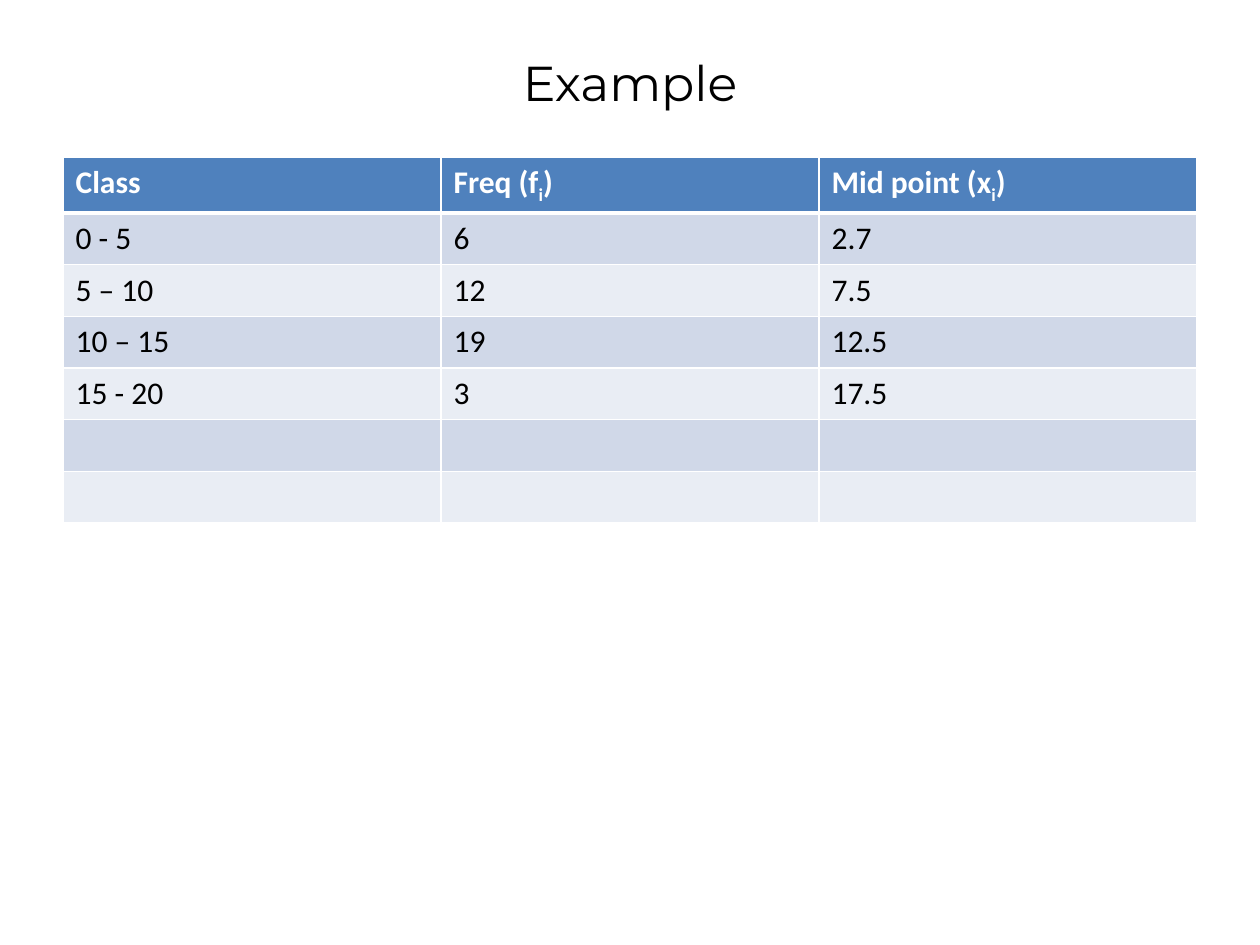
from lxml import etree
from pptx import Presentation
from pptx.dml.color import RGBColor
from pptx.enum.text import MSO_ANCHOR, PP_ALIGN
from pptx.oxml.ns import qn
from pptx.util import Inches, Pt

LEFT, CENTER = PP_ALIGN.LEFT, PP_ALIGN.CENTER
MIDDLE = MSO_ANCHOR.MIDDLE
BLACK, WHITE, BLUE = "000000", "FFFFFF", "4F81BD"
BANDS = ("D0D8E8", "E9EDF4")
ROWS = [
    ("Class", "Freq (f|i|)", "Mid point (x|i|)"),
    ("0 - 5", "6", "2.7"),
    ("5 – 10", "12", "7.5"),
    ("10 – 15", "19", "12.5"),
    ("15 - 20", "3", "17.5"),
    ("", "", ""),
    ("", "", ""),
]


def color(code):
    return RGBColor.from_string(code)


def write(frame, text, size=18, font="Calibri", ink=BLACK, bold=False, align=LEFT):
    para = frame.paragraphs[0]
    para.alignment = align
    para.font.size = Pt(size)
    if not text:
        return
    for i, part in enumerate(text.split("|")):
        run = para.add_run()
        run.text = part
        run.font.size = Pt(size)
        run.font.name = font
        run.font.bold = bold
        run.font.color.rgb = color(ink)
        if i % 2:
            run._r.get_or_add_rPr().set("baseline", "-25000")


def border(cell, side, width):
    props = cell._tc.get_or_add_tcPr()
    line = etree.SubElement(props, qn(f"a:ln{side}"), w=str(Pt(width)))
    fill = etree.SubElement(line, qn("a:solidFill"))
    etree.SubElement(fill, qn("a:srgbClr"), val=WHITE)


def add_title(slide, text):
    box = slide.shapes.add_textbox(Inches(0.5), Inches(0.3), Inches(9), Inches(0.7))
    frame = box.text_frame
    frame.word_wrap = True
    frame.vertical_anchor = MIDDLE
    write(frame, text, size=28, font="Montserrat", align=CENTER)


def add_grid(slide, rows):
    high = Inches(0.41)
    table = slide.shapes.add_table(
        len(rows), len(rows[0]), Inches(0.5), Inches(1.25), Inches(9), high * len(rows)
    ).table
    for r, row in enumerate(rows):
        table.rows[r].height = high
        head = r == 0
        for c, text in enumerate(row):
            cell = table.cell(r, c)
            for side in "LRTB":
                thick = (head and side == "B") or (r == 1 and side == "T")
                border(cell, side, 3 if thick else 1)
            cell.fill.solid()
            cell.fill.fore_color.rgb = color(BLUE if head else BANDS[(r - 1) % 2])
            write(cell.text_frame, text, ink=WHITE if head else BLACK, bold=head)


def main():
    deck = Presentation()
    deck.slide_width, deck.slide_height = Inches(10), Inches(7.5)
    slide = deck.slides.add_slide(deck.slide_layouts[6])
    add_title(slide, "Example")
    add_grid(slide, ROWS)
    deck.save("out.pptx")


if __name__ == "__main__":
    main()
